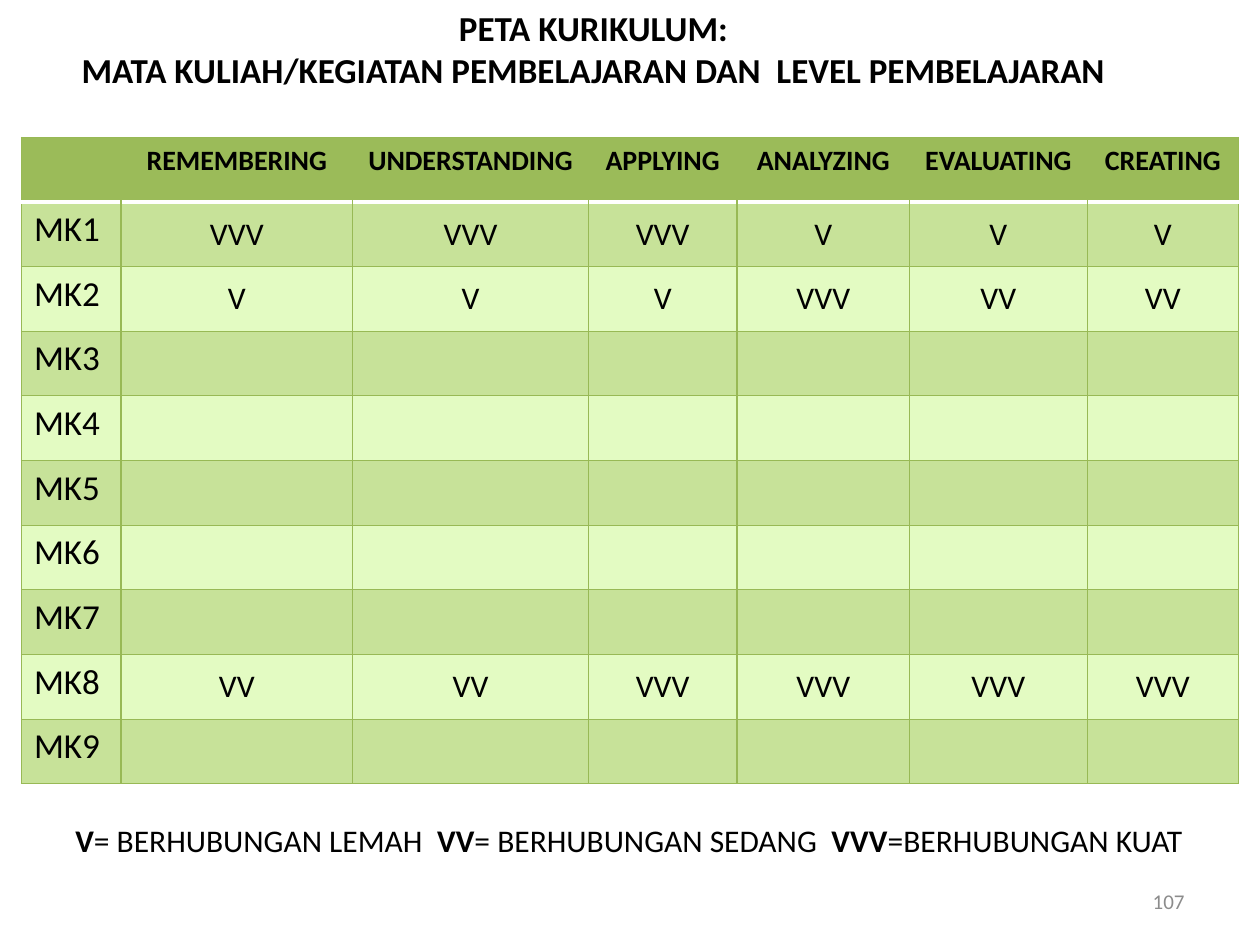
from lxml.etree import SubElement
from pptx import Presentation
from pptx.dml.color import RGBColor
from pptx.enum.text import MSO_ANCHOR as Anchor, PP_ALIGN as Align
from pptx.oxml.ns import qn
from pptx.util import Inches, Pt

COLORS = {
    "text": "000000",
    "number": "8C8C8C",
    "header": "9BBB59",
    "odd_row": "C7E299",
    "even_row": "E3FBC2",
    "border": "98B955",
    "header_rule": "FFFFFF",
}
FONT = "Calibri"
LEVELS = ["REMEMBERING", "UNDERSTANDING", "APPLYING", "ANALYZING", "EVALUATING", "CREATING"]
COLUMN_WIDTHS = [0.79, 1.84, 1.87, 1.18, 1.37, 1.41, 1.2]
COURSE_COUNT = 9
RATINGS = {
    1: ["VVV", "VVV", "VVV", "V", "V", "V"],
    2: ["V", "V", "V", "VVV", "VV", "VV"],
    8: ["VV", "VV", "VVV", "VVV", "VVV", "VVV"],
}
LEGEND = [
    ("V", "= BERHUBUNGAN LEMAH  "),
    ("VV", "= BERHUBUNGAN SEDANG  "),
    ("VVV", "=BERHUBUNGAN KUAT"),
]


def style_paragraph(para, size, color="text", bold=None, align=Align.LEFT):
    para.alignment = align
    para.font.name = FONT
    para.font.size = Pt(size)
    para.font.bold = bold
    para.font.color.rgb = RGBColor.from_string(COLORS[color])


def add_text_box(page, left, top, width, height, anchor=Anchor.TOP):
    box = page.shapes.add_textbox(Inches(left), Inches(top), Inches(width), Inches(height))
    box.text_frame.word_wrap = True
    box.text_frame.vertical_anchor = anchor
    return box.text_frame.paragraphs[0]


def add_title(page, left, top, width, height):
    para = add_text_box(page, left, top, width, height)
    para.text = "PETA KURIKULUM:\vMATA KULIAH/KEGIATAN PEMBELAJARAN DAN  LEVEL PEMBELAJARAN"
    style_paragraph(para, 20, bold=True, align=Align.CENTER)


def set_border(cell, side, color, width):
    line = SubElement(cell._tc.get_or_add_tcPr(), qn(f"a:ln{side}"), w=str(Pt(width)))
    if color is None:
        SubElement(line, qn("a:noFill"))
    else:
        fill = SubElement(line, qn("a:solidFill"))
        SubElement(fill, qn("a:srgbClr"), val=COLORS[color])


def style_cell(cell, row, column):
    header = row == 0
    last_column = len(LEVELS)
    borders = {side: ("border", 0.75) for side in "LRTB"}
    if header:
        borders["B"] = ("header_rule", 2)
        if column > 0:
            borders["L"] = (None, 0.75)
        if column < last_column:
            borders["R"] = (None, 0.75)
    elif row == 1:
        borders["T"] = ("header_rule", 2)
    for side, (color, width) in borders.items():
        set_border(cell, side, color, width)

    fill_name = "header" if header else "odd_row" if row % 2 else "even_row"
    cell.fill.solid()
    cell.fill.fore_color.rgb = RGBColor.from_string(COLORS[fill_name])

    rating = not header and column > 0
    cell.vertical_anchor = Anchor.MIDDLE if rating else Anchor.TOP
    size = 16 if header else 18 if rating else 20
    align = Align.CENTER if header or rating else Align.LEFT
    style_paragraph(cell.text_frame.paragraphs[0], size, bold=header, align=align)


def add_curriculum_table(page, left, top, width, height):
    rows = [["", *LEVELS]]
    for number in range(1, COURSE_COUNT + 1):
        rows.append([f"MK{number}", *RATINGS.get(number, [""] * len(LEVELS))])
    table = page.shapes.add_table(
        len(rows), len(COLUMN_WIDTHS), Inches(left), Inches(top), Inches(width), Inches(height)
    ).table
    for column, column_width in zip(table.columns, COLUMN_WIDTHS):
        column.width = Inches(column_width)
    for row, values in enumerate(rows):
        for column, value in enumerate(values):
            cell = table.cell(row, column)
            cell.text = value
            style_cell(cell, row, column)


def add_legend(page, left, top, width, height):
    para = add_text_box(page, left, top, width, height)
    style_paragraph(para, 18)
    for mark, meaning in LEGEND:
        for text, bold in ((mark, True), (meaning, False)):
            span = para.add_run()
            span.text = text
            span.font.bold = bold


def add_page_number(page, left, top, width, height):
    para = add_text_box(page, left, top, width, height, Anchor.MIDDLE)
    para.text = "107"
    style_paragraph(para, 12, color="number", align=Align.RIGHT)


def main():
    deck = Presentation()
    deck.slide_width = Inches(10)
    deck.slide_height = Inches(7.5)
    page = deck.slides.add_slide(deck.slide_layouts[6])
    add_title(page, 0.07, 0, 9.28, 0.55)
    add_curriculum_table(page, 0.17, 1.09, sum(COLUMN_WIDTHS), 5.13)
    add_legend(page, 0.5, 6.47, 9.33, 0.4)
    add_page_number(page, 7.17, 6.95, 2.33, 0.4)
    deck.save("out.pptx")


if __name__ == "__main__":
    main()
